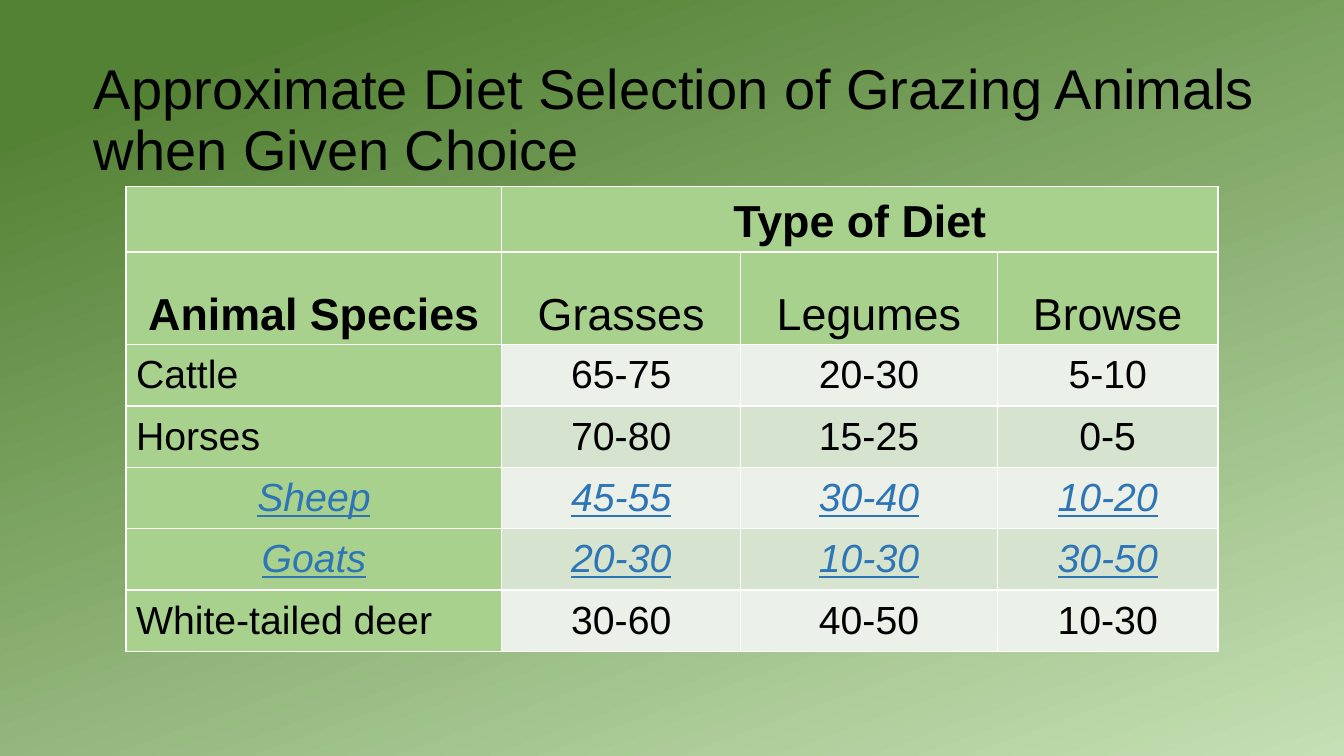
from pptx import Presentation
from pptx.dml.color import RGBColor
from pptx.enum import text
from pptx.oxml import parse_xml
from pptx.oxml.ns import nsdecls
from pptx.util import Pt

FONT = "Arial"
BLACK = RGBColor(0x00, 0x00, 0x00)
BLUE = RGBColor(0x2E, 0x75, 0xB6)
WHITE = RGBColor(0xFF, 0xFF, 0xFF)
DARK = RGBColor(0x54, 0x82, 0x35)
PALE = RGBColor(0xC5, 0xE0, 0xB4)
HEAD = RGBColor(0xA9, 0xD1, 0x8E)
BANDS = [RGBColor(0xEB, 0xF1, 0xE9), RGBColor(0xD5, 0xE3, 0xCF)]

LEFT, CENTER = text.PP_ALIGN.LEFT, text.PP_ALIGN.CENTER
MIDDLE, BOTTOM = text.MSO_ANCHOR.MIDDLE, text.MSO_ANCHOR.BOTTOM

TITLE = "Approximate Diet Selection of Grazing Animals when Given Choice"
HEADS = ["Animal Species", "Grasses", "Legumes", "Browse"]
DIETS = [
    ["Cattle", "65-75", "20-30", "5-10"],
    ["Horses", "70-80", "15-25", "0-5"],
    ["Sheep", "45-55", "30-40", "10-20"],
    ["Goats", "20-30", "10-30", "30-50"],
    ["White-tailed deer", "30-60", "40-50", "10-30"],
]
MARKED = {"Sheep", "Goats"}
COLS = [268.5, 170.5, 183.5, 157.5]
ROWS = [46.8, 66.2] + [43.8] * len(DIETS)


def write(frame, words, size=28, color=BLACK, align=LEFT, bold=False,
          italic=False, under=False, spacing=None):
    para = frame.paragraphs[0]
    para.alignment = align
    para.line_spacing = spacing
    run = para.add_run()
    run.text = words
    font = run.font
    font.name, font.size, font.color.rgb = FONT, Pt(size), color
    font.bold, font.italic, font.underline = bold, italic, under


def paint(cell, color):
    """Give a cell thin white borders and a solid fill."""
    props = cell._tc.get_or_add_tcPr()
    for side in "LRTB":
        props.append(parse_xml(
            f'<a:ln{side} {nsdecls("a")} w="{Pt(1)}"><a:solidFill>'
            f'<a:srgbClr val="{WHITE}"/></a:solidFill></a:ln{side}>'))
    cell.fill.solid()
    cell.fill.fore_color.rgb = color


def add_back(slide):
    fill = slide.background.fill
    fill.gradient()
    fill.gradient_angle = 290
    for stop, place, color in zip(fill.gradient_stops, (0.11, 1), (DARK, PALE)):
        stop.position, stop.color.rgb = place, color


def add_title(slide, left, top, width, height):
    box = slide.shapes.add_textbox(Pt(left), Pt(top), Pt(width), Pt(height))
    frame = box.text_frame
    frame.word_wrap = True
    frame.vertical_anchor = MIDDLE
    write(frame, TITLE, size=40, spacing=0.9)


def add_diets(slide, left, top):
    table = slide.shapes.add_table(
        len(ROWS), len(COLS), Pt(left), Pt(top),
        Pt(sum(COLS)), Pt(sum(ROWS))).table
    table.first_row = table.horz_banding = False
    for col, width in zip(table.columns, COLS):
        col.width = Pt(width)
    for row, height in zip(table.rows, ROWS):
        row.height = Pt(height)

    table.cell(0, 1).merge(table.cell(0, len(COLS) - 1))
    for r in range(len(ROWS)):
        for c in range(len(COLS)):
            cell = table.cell(r, c)
            paint(cell, HEAD if r < 2 or c == 0 else BANDS[r % 2])
            cell.vertical_anchor = BOTTOM if r < 2 else MIDDLE

    write(table.cell(0, 1).text_frame, "Type of Diet", size=32,
          align=CENTER, bold=True)
    for c, head in enumerate(HEADS):
        write(table.cell(1, c).text_frame, head, size=32,
              align=CENTER, bold=c == 0)
    for r, diet in enumerate(DIETS, 2):
        mark = diet[0] in MARKED
        for c, value in enumerate(diet):
            write(table.cell(r, c).text_frame, value,
                  color=BLUE if mark else BLACK,
                  align=CENTER if mark or c else LEFT,
                  italic=mark, under=mark)


def main():
    deck = Presentation()
    deck.slide_width, deck.slide_height = Pt(960), Pt(540)
    slide = deck.slides.add_slide(deck.slide_layouts[6])
    add_back(slide)
    add_title(slide, 60, 18, 870, 138)
    add_diets(slide, 90, 133.2)
    deck.save("out.pptx")


if __name__ == "__main__":
    main()
